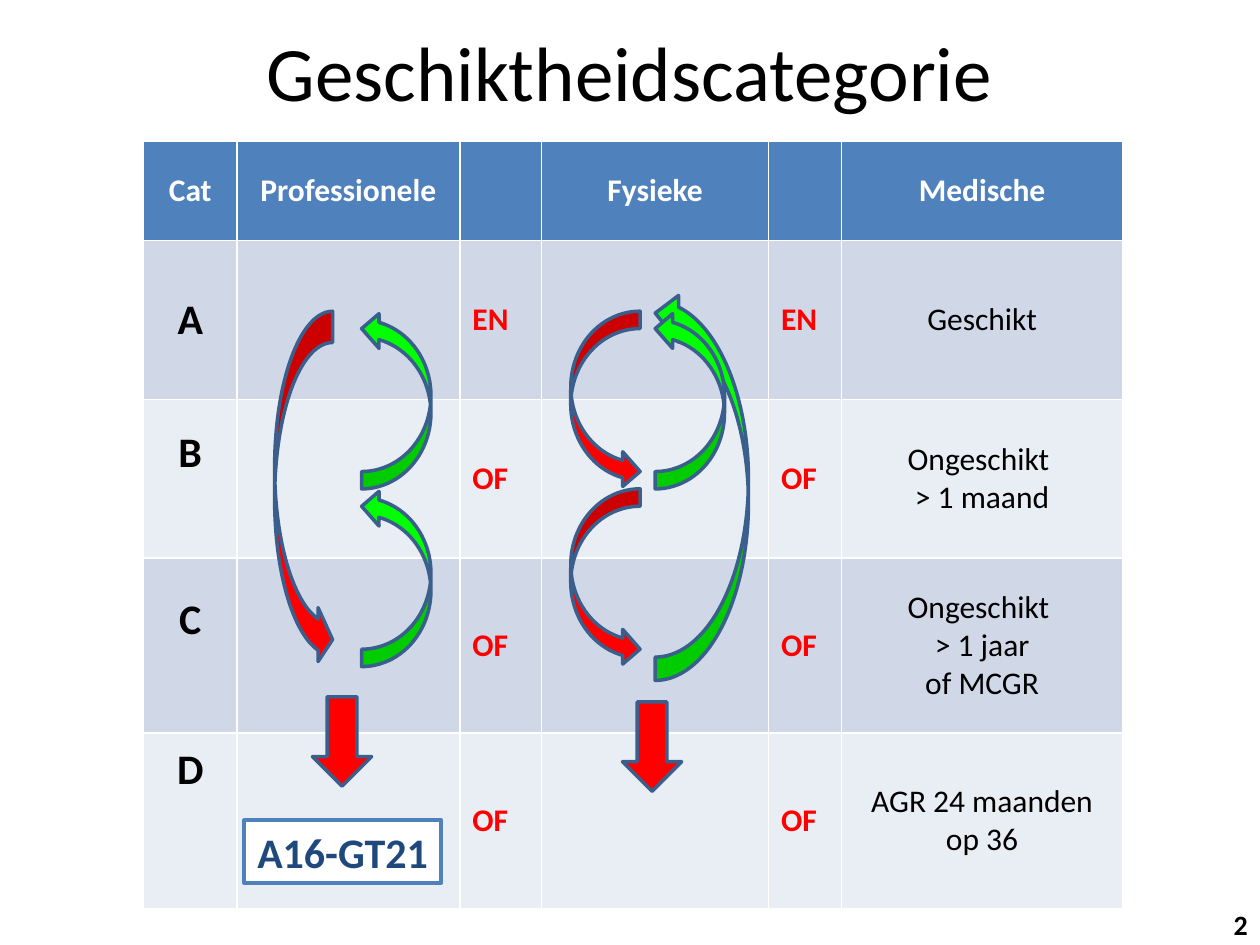
from dataclasses import dataclass

from pptx import Presentation
from pptx import util as u
from pptx.dml.color import RGBColor
from pptx.enum import shapes, text

COLUMNS, ROWS = 100, 75
CELL = u.Inches(0.1)
RED, GREEN, BLUE, OUTLINE = "FF0000", "00FF00", "4F81BD", "3A5F8C"
WHITE, BLACK, NAVY = "FFFFFF", "000000", "1F497D"
BANDS = "D0D8E8", "E9EDF4"
CENTER = text.PP_ALIGN.CENTER
CURVED = shapes.MSO_SHAPE.CURVED_RIGHT_ARROW
DOWN = shapes.MSO_SHAPE.DOWN_ARROW


@dataclass
class Arrow:
    left: float
    top: float
    width: float
    height: float
    color: str = RED
    kind: int = CURVED
    adjustments: tuple = ()


@dataclass
class Category:
    letter: str
    link: str
    medical: str
    height: float
    lift: float = 0


LOOP_WIDTH, LOOP_HEIGHT = 5.5, 14.1
UPPER = 24.7
LOWER = UPPER + LOOP_HEIGHT

ARROWS = [
    Arrow(21.8, UPPER, 4.6, 2 * LOOP_HEIGHT, adjustments=(0.54, 0.93, 0.25)),
    Arrow(24.8, 55.3, 4.7, 7.1, kind=DOWN),
    Arrow(52, 23, 7.4, 31, GREEN),
    *(Arrow(left, top, LOOP_WIDTH, LOOP_HEIGHT, color) for left, top, color in [
        (28.7, UPPER, GREEN), (28.7, LOWER, GREEN),
        (45.3, UPPER, RED), (45.3, LOWER, RED), (52, UPPER, GREEN)]),
    Arrow(49.4, 55.7, 4.7, 7.1, kind=DOWN),
]

HEADINGS = ["Cat", "Professionele", "", "Fysieke", "", "Medische"]
COLUMN_WIDTHS = [7.4, 17.7, 6.5, 18, 5.8, 22.3]
HEADER_HEIGHT = 7.9
CATEGORIES = [
    Category("A", "EN", "Geschikt", 12.6),
    Category("B", "OF", "Ongeschikt \v> 1 maand", 12.6, 4),
    Category("C", "OF", "Ongeschikt \n> 1 jaar\nof MCGR", 13.9, 4),
    Category("D", "OF", "AGR 24 maanden op 36", 13.9, 8),
]


def grid(count: float) -> int:
    return round(count * CELL)


def area(*lengths: float) -> list[int]:
    return [grid(length) for length in lengths]


def rgb(value: str) -> RGBColor:
    return RGBColor.from_string(value)


def write(frame, words: str, *, size: float = 18, color: str = BLACK,
          bold: bool = False, align=CENTER) -> None:
    frame.text = words
    for para in frame.paragraphs:
        para.alignment = align
        for span in para.runs:
            span.font.name = "Calibri"
            span.font.size = u.Pt(size)
            span.font.bold = bold
            span.font.color.rgb = rgb(color)


def paint(shape, fill: str, line: str, width: float) -> None:
    shape.shadow.inherit = False
    shape.fill.solid()
    shape.fill.fore_color.rgb = rgb(fill)
    shape.line.color.rgb = rgb(line)
    shape.line.width = u.Pt(width)


def draw_arrow(slide, arrow: Arrow) -> None:
    shape = slide.shapes.add_shape(
        arrow.kind, *area(arrow.left, arrow.top, arrow.width, arrow.height))
    paint(shape, arrow.color, OUTLINE, 2)
    if arrow.color == GREEN:
        shape.rotation = 180
    for index, value in enumerate(arrow.adjustments):
        shape.adjustments[index] = value


def fill_cell(cell, fill: str, words: str, **style) -> None:
    cell.fill.solid()
    cell.fill.fore_color.rgb = rgb(fill)
    cell.vertical_anchor = text.MSO_ANCHOR.MIDDLE
    if words:
        write(cell.text_frame, words, **style)


def draw_table(slide) -> None:
    heights = [HEADER_HEIGHT] + [category.height for category in CATEGORIES]
    table = slide.shapes.add_table(
        len(heights), len(COLUMN_WIDTHS),
        *area(11.4, 11.2, sum(COLUMN_WIDTHS), sum(heights))).table
    for column, width in zip(table.columns, COLUMN_WIDTHS):
        column.width = grid(width)
    for row, height in zip(table.rows, heights):
        row.height = grid(height)
    for cell, heading in zip(table.rows[0].cells, HEADINGS):
        fill_cell(cell, BLUE, heading, color=WHITE, bold=True)

    letter_style = dict(size=24, bold=True)
    link_style = dict(color=RED, bold=True, align=text.PP_ALIGN.LEFT)
    for index, category in enumerate(CATEGORIES):
        contents = [
            (category.letter, letter_style), ("", {}),
            (category.link, link_style), ("", {}),
            (category.link, link_style), (category.medical, {}),
        ]
        cells = list(table.rows[index + 1].cells)
        for cell, (words, style) in zip(cells, contents):
            fill_cell(cell, BANDS[index % 2], words, **style)
        cells[0].margin_bottom = grid(0.5 + category.lift)


def draw_code(slide) -> None:
    box = slide.shapes.add_shape(
        shapes.MSO_SHAPE.RECTANGLE, *area(19.4, 65.1, 15.6, 5))
    paint(box, WHITE, BLUE, 2.25)
    write(box.text_frame, "A16-GT21", size=24, color=NAVY, bold=True)
    box.text_frame.word_wrap = False
    box.text_frame.auto_size = text.MSO_AUTO_SIZE.SHAPE_TO_FIT_TEXT


def draw_page_number(slide) -> None:
    box = slide.shapes.add_textbox(*area(93.8, 71.7, 6.2, 3.3))
    box.text_frame.word_wrap = True
    box.text_frame.vertical_anchor = text.MSO_ANCHOR.MIDDLE
    write(box.text_frame, "2", size=16, bold=True, align=text.PP_ALIGN.RIGHT)


def draw_title(slide) -> None:
    title = slide.shapes.title
    title.left, title.top, title.width, title.height = area(5, 2.2, 90, 6.9)
    title.text_frame.vertical_anchor = text.MSO_ANCHOR.MIDDLE
    write(title.text_frame, "Geschiktheidscategorie", size=44)


def main() -> None:
    deck = Presentation()
    deck.slide_width, deck.slide_height = area(COLUMNS, ROWS)
    slide = deck.slides.add_slide(deck.slide_layouts.get_by_name("Title Only"))
    draw_title(slide)
    draw_table(slide)
    for arrow in ARROWS:
        draw_arrow(slide, arrow)
    draw_page_number(slide)
    draw_code(slide)
    deck.save("out.pptx")


if __name__ == "__main__":
    main()
